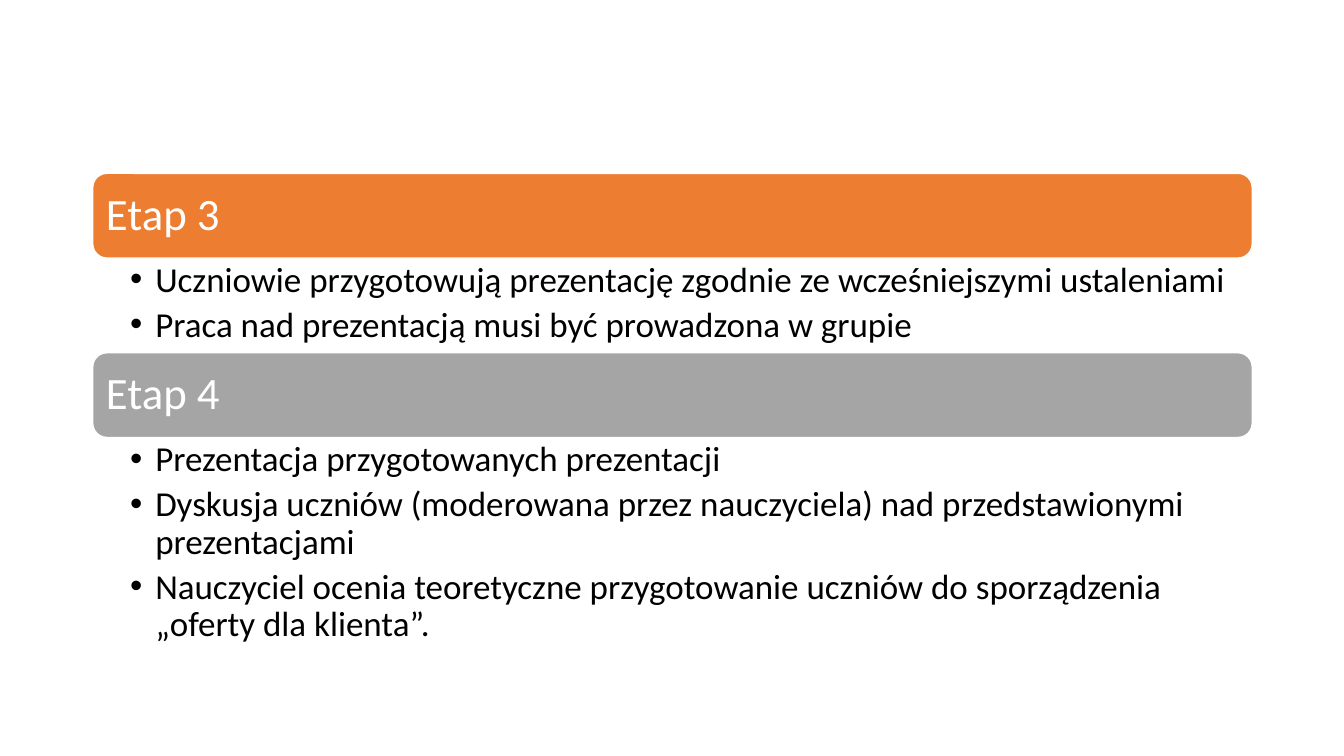
"""Builds the slide with stages 3 and 4 as coloured bars over bulleted lists."""
import pptx
import pptx.util
import pptx.dml.color
import pptx.enum.shapes
import pptx.enum.text

STAGES = [
    ("Etap 3", "orange", 0.94, [
        "Uczniowie przygotowują prezentację zgodnie ze wcześniejszymi ustaleniami",
        "Praca nad prezentacją musi być prowadzona w grupie",
    ]),
    ("Etap 4", "gray", 2.17, [
        "Prezentacja przygotowanych prezentacji",
        "Dyskusja uczniów (moderowana przez nauczyciela) nad przedstawionymi prezentacjami",
        "Nauczyciel ocenia teoretyczne przygotowanie uczniów do sporządzenia „oferty dla klienta”.",
    ]),
]
COLORS = {"orange": "ED7D31", "gray": "A5A5A5", "white": "FFFFFF", "black": "000000"}
FONT = "Calibri"
LEFT, TOP, WIDTH, BAR_H = 0.92, 1.72, 11.5, 0.84
INDENT = 0.25

Inches, Pt = pptx.util.Inches, pptx.util.Pt
ANCHOR = pptx.enum.text.MSO_ANCHOR


def rgb(name):
    return pptx.dml.color.RGBColor.from_string(COLORS[name])


def format_text(tf, size, color, after, insets, anchor):
    tf.word_wrap = True
    tf.auto_size = pptx.enum.text.MSO_AUTO_SIZE.NONE
    tf.vertical_anchor = anchor
    tf.margin_left, tf.margin_top, tf.margin_right, tf.margin_bottom = map(Inches, insets)
    for p in tf.paragraphs:
        p.alignment = pptx.enum.text.PP_ALIGN.LEFT
        p.line_spacing = 0.9
        p.space_before, p.space_after = Pt(0), Pt(size * after)
        for r in p.runs:
            r.font.name, r.font.size = FONT, Pt(size)
            r.font.color.rgb = rgb(color)


def add_bar(slide, top, heading, color):
    sp = slide.shapes.add_shape(pptx.enum.shapes.MSO_SHAPE.ROUNDED_RECTANGLE,
                                Inches(LEFT), Inches(top), Inches(WIDTH), Inches(BAR_H))
    sp.shadow.inherit = False
    sp.fill.solid()
    sp.fill.fore_color.rgb = rgb(color)
    sp.line.color.rgb = rgb("white")
    sp.line.width = Pt(1)
    sp.text_frame.text = heading
    format_text(sp.text_frame, 32, "white", 0.35, (0.09, 0.09, 0.09, 0.09), ANCHOR.MIDDLE)


def fill_list(sp, top, height, items):
    sp.left, sp.top, sp.width, sp.height = map(Inches, (LEFT, top, WIDTH, height))
    tf = sp.text_frame
    tf.text = "\n".join(items)
    format_text(tf, 25, "black", 0.2, (0.37, 0.04, 0.25, 0.04), ANCHOR.TOP)
    for p in tf.paragraphs:
        pPr = p._p.get_or_add_pPr()
        pPr.set("marL", str(Inches(INDENT)))
        pPr.set("indent", str(-Inches(INDENT)))


def main():
    prs = pptx.Presentation()
    prs.slide_width, prs.slide_height = Inches(13.33), Inches(7.5)
    slide = prs.slides.add_slide(prs.slide_layouts.get_by_name("Two Content"))
    title = slide.shapes.title
    title.element.getparent().remove(title.element)
    top = TOP
    for sp, (heading, color, height, items) in zip(list(slide.placeholders), STAGES):
        add_bar(slide, top, heading, color)
        fill_list(sp, top + BAR_H, height, items)
        top += BAR_H + height
    prs.save("out.pptx")


if __name__ == "__main__":
    main()
